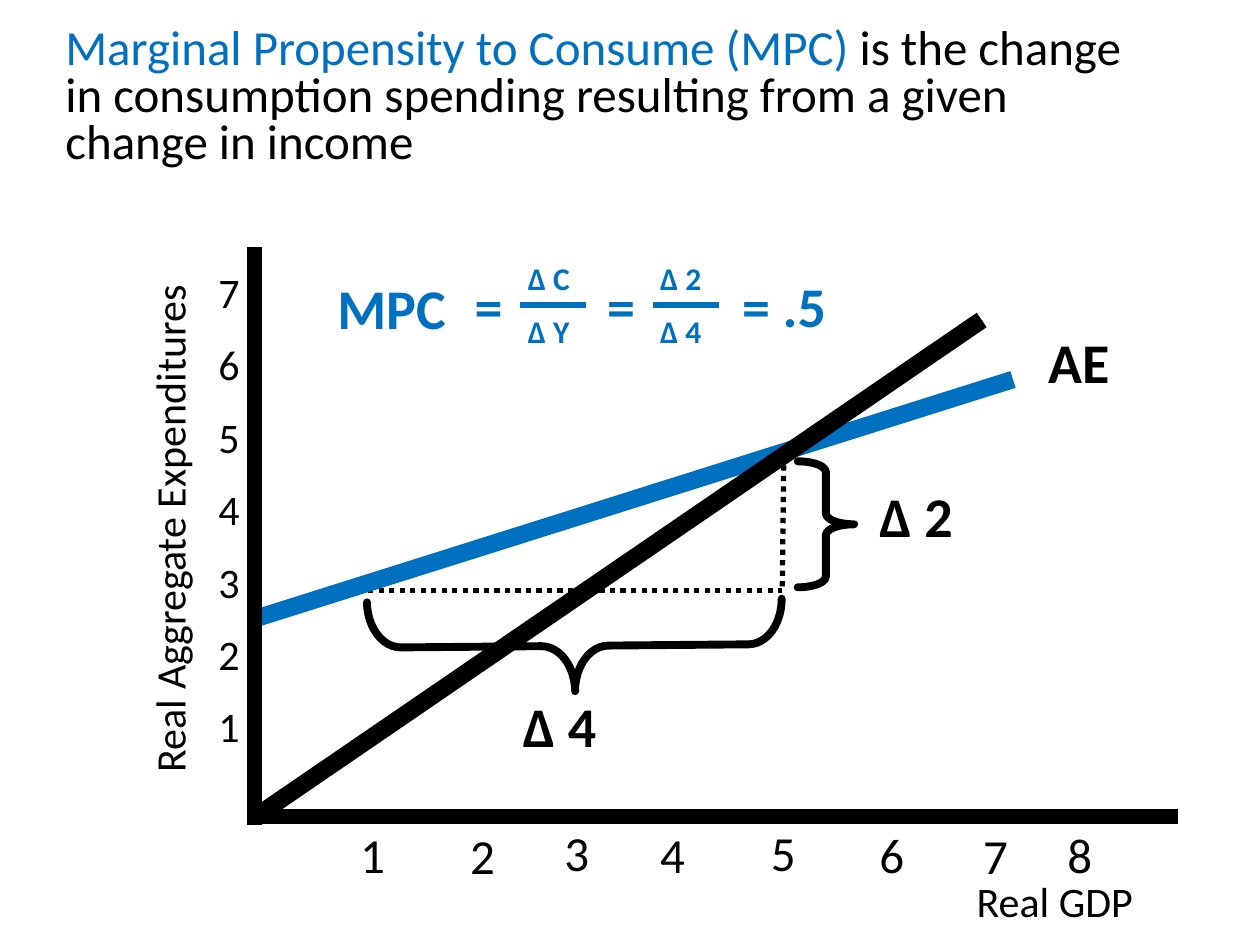
from pptx import Presentation
from pptx.dml.color import RGBColor
from pptx.enum.dml import MSO_LINE
from pptx.enum.shapes import MSO_CONNECTOR, MSO_SHAPE
from pptx.enum.text import PP_ALIGN
from pptx.oxml.ns import qn
from pptx.util import Cm, Pt

BLACK, BLUE = "000000", "0070C0"
LEFT, MID, RIGHT = PP_ALIGN.LEFT, PP_ALIGN.CENTER, PP_ALIGN.RIGHT


def paint(target, color):
    target.rgb = RGBColor.from_string(color)


def add_text(shapes, text, box, size, color=BLACK, bold=False,
             align=LEFT, wrap=True):
    item = shapes.add_textbox(*map(Cm, box))
    frame = item.text_frame
    frame.word_wrap = wrap
    para = frame.paragraphs[0]
    para.text = text
    para.alignment = align
    para.line_spacing = 0.9
    para.font.name = "Calibri"
    para.font.size = Pt(size)
    para.font.bold = bold
    paint(para.font.color, color)
    return item


def add_line(shapes, start, end, width, color=BLACK, dash=None):
    item = shapes.add_connector(MSO_CONNECTOR.STRAIGHT,
                                *map(Cm, start + end))
    paint(item.line.color, color)
    item.line.width = Pt(width)
    if dash:
        item.line.dash_style = dash
    props = item._element.spPr
    props.append(props.makeelement(qn("a:effectLst"), {}))


def add_brace(shapes, box, curve, turn=0):
    item = shapes.add_shape(MSO_SHAPE.RIGHT_BRACE, *map(Cm, box))
    item.adjustments[0] = curve
    item.adjustments[1] = 0.5
    item.rotation = turn
    item.shadow.inherit = False
    item.fill.background()
    paint(item.line.color, BLACK)
    item.line.width = Pt(4.5)
    item._element.spPr.find(qn("a:ln")).set("cap", "rnd")


def add_ratio(shapes, left, top, below):
    """Group an equals sign with a fraction to its right."""
    parts = shapes.add_group_shape().shapes
    add_text(parts, "=", (left, 5.51, 1.17, 1.5), 32, BLUE, True)
    for text, y in ((top, 5.18), (below, 6.25)):
        add_text(parts, text, (left + 1.07, y, 1.4, 0.94), 18, BLUE, True,
                 wrap=False)
    add_line(parts, (left + 1.17, 6.15), (left + 2.5, 6.15), 3, BLUE)


def add_title(shapes):
    item = add_text(shapes, "Marginal Propensity to Consume (MPC) ",
                    (1.07, 0.43, 22.17, 3.12), 28)
    para = item.text_frame.paragraphs[0]
    para.line_spacing = 0.8
    paint(para.runs[0].font.color, BLUE)
    para.add_run().text = ("is the change in consumption spending "
                           "resulting from a given change in income")


def add_scales(shapes):
    for i in range(7):
        add_text(shapes, str(7 - i), (3.43, 5.36 + 1.46 * i, 1.65, 1.19),
                 24, align=RIGHT)
    marks = ((7.51, 16.64), (9.73, 16.66), (11.63, 16.59), (13.56, 16.64),
             (15.79, 16.59), (17.98, 16.64), (20.07, 16.66), (21.77, 16.64))
    for num, (x, y) in enumerate(marks, 1):
        add_text(shapes, str(num), (x - 0.75, y, 1.5, 1.32), 28, align=MID)
    add_text(shapes, "Real GDP", (18.8, 17.63, 4.93, 1.17), 24, align=MID)
    name = add_text(shapes, "Real Aggregate Expenditures",
                    (-2.54, 10.06, 12.04, 1.19), 24, align=MID)
    name.rotation = 270


def add_graph(shapes):
    add_line(shapes, (5.13, 16.46), (23.75, 16.46), 9)
    corner = (15.77, 11.91)
    for start in ((7.42, 11.91), (15.8, 9.17)):
        add_line(shapes, start, corner, 3, dash=MSO_LINE.ROUND_DOT)
    add_line(shapes, (5.21, 12.45), (20.42, 7.65), 10, BLUE)
    add_line(shapes, (5.13, 4.98), (5.13, 16.64), 9)
    add_line(shapes, (5.16, 16.46), (19.79, 6.45), 10)
    add_brace(shapes, (16.08, 9.3, 1.14, 2.54), 0.19)
    add_brace(shapes, (10.67, 8.84, 1.83, 8.36), 0.37, 89.5)
    add_text(shapes, "AE", (20.52, 6.63, 2.46, 1.5), 32, bold=True, align=MID)
    add_text(shapes, "Δ 2", (17.48, 9.73, 3.05, 1.5), 32, bold=True)
    add_text(shapes, "Δ 4", (10.29, 13.97, 3.05, 1.5), 32, bold=True)


def add_formula(shapes):
    add_text(shapes, "MPC", (6.55, 5.54, 3.18, 1.5), 32, BLUE, True)
    add_ratio(shapes, 9.32, "Δ C", "Δ Y")
    add_ratio(shapes, 11.99, "Δ 2", "Δ 4")
    add_text(shapes, "= .5", (14.71, 5.51, 2.51, 1.5), 32, BLUE, True)


def main():
    deck = Presentation()
    deck.slide_width, deck.slide_height = Cm(25.4), Cm(19.05)
    shapes = deck.slides.add_slide(deck.slide_layouts[6]).shapes
    add_title(shapes)
    add_scales(shapes)
    add_graph(shapes)
    add_formula(shapes)
    deck.save("out.pptx")


if __name__ == "__main__":
    main()
